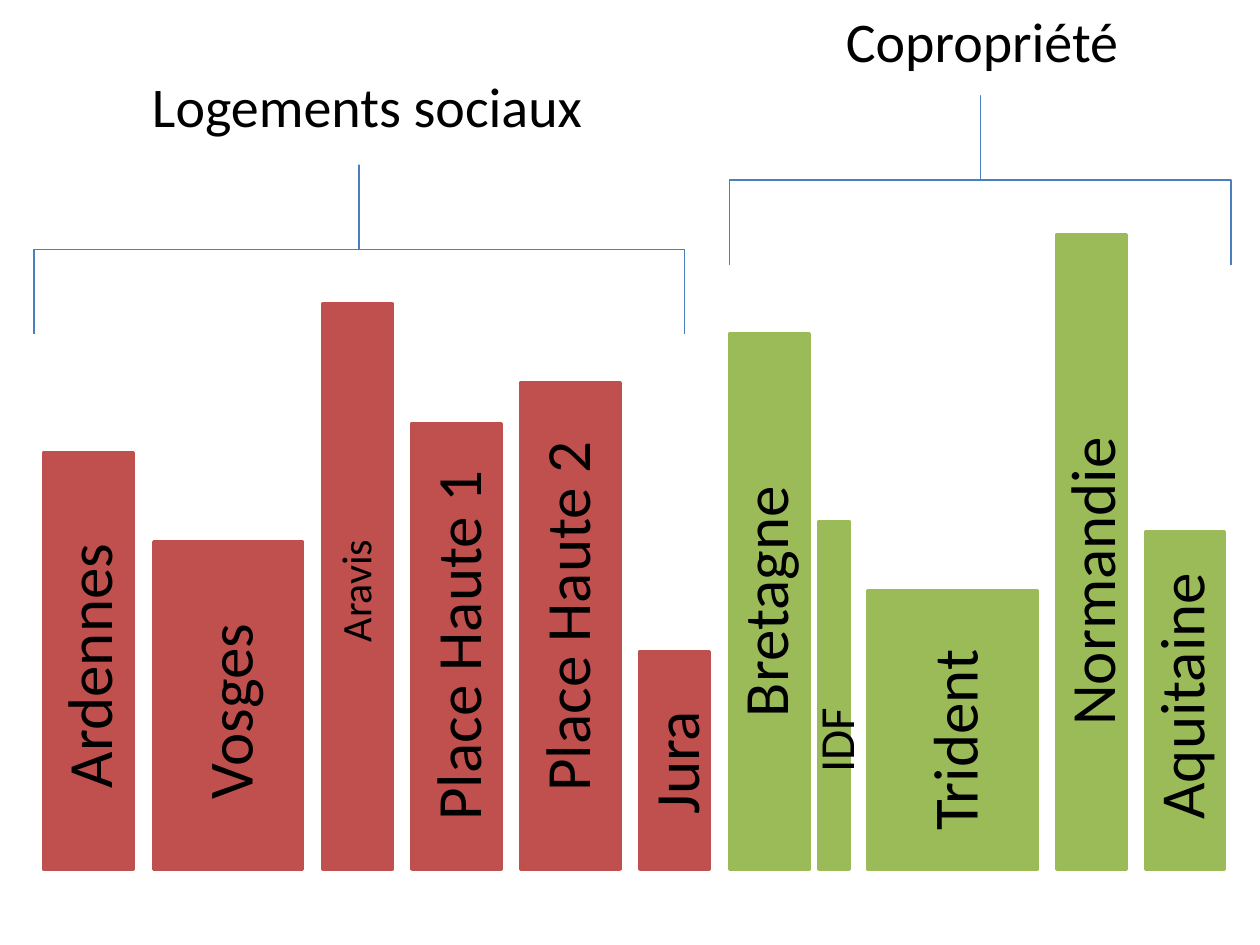
"""Build a skyline of housing blocks, grouped by social housing and co-ownership."""
import pptx
import pptx.util
import pptx.dml.color
import pptx.enum.shapes
import pptx.enum.text

PX = 9144
GROUND = 690
SOCIAL, SHARED, BRACE, INK = "C0504D", "9BBB59", "4B7EBC", "000000"


def color(value):
    return pptx.dml.color.RGBColor.from_string(value)


def add_label(slide, wording, left, top, length, size, rotation=0):
    thickness = int(size * 1.22 / 72 * 100 + 10)
    label = slide.shapes.add_textbox(left * PX, top * PX, length * PX, thickness * PX)
    label.rotation = rotation
    frame = label.text_frame
    frame.word_wrap = True
    frame.auto_size = pptx.enum.text.MSO_AUTO_SIZE.SHAPE_TO_FIT_TEXT
    paragraph = frame.paragraphs[0]
    paragraph.alignment = pptx.enum.text.PP_ALIGN.CENTER
    run = paragraph.add_run()
    run.text = wording
    run.font.name = "Calibri"
    run.font.size = pptx.util.Pt(size)
    run.font.color.rgb = color(INK)


deck = pptx.Presentation()
deck.slide_width, deck.slide_height = 1000 * PX, 750 * PX
slide = deck.slides.add_slide(deck.slide_layouts[6])

buildings = [
    ("Ardennes", SOCIAL, (35, 359, 71), (-84, 493, 307, 36)),
    ("Vosges", SOCIAL, (122, 430, 118), (63, 529, 236, 36)),
    ("Aravis", SOCIAL, (256, 241, 55), (69, 444, 425, 24)),
    ("Place Haute 1", SOCIAL, (327, 336, 71), (209, 477, 307, 36)),
    ("Place Haute 2", SOCIAL, (413, 304, 79), (272, 454, 354, 36)),
    ("Jura", SOCIAL, (508, 517, 55), (470, 570, 131, 36)),
    ("Bretagne", SHARED, (579, 265, 63), (409, 442, 394, 36)),
    ("IDF", SHARED, (650, 414, 24), (568, 559, 189, 28)),
    ("Trident", SHARED, (689, 469, 134), (654, 552, 205, 36)),
    ("Normandie", SHARED, (839, 186, 55), (653, 426, 425, 36)),
    ("Aquitaine", SHARED, (909, 422, 63), (783, 517, 307, 36)),
]
for name, tint, (left, top, width), label_place in buildings:
    block = slide.shapes.add_shape(
        pptx.enum.shapes.MSO_SHAPE.RECTANGLE,
        left * PX, top * PX, width * PX, (GROUND - top) * PX)
    block.shadow.inherit = False
    block.fill.solid()
    block.fill.fore_color.rgb = color(tint)
    block.line.color.rgb = color(tint)
    block.line.width = pptx.util.Pt(2)
    add_label(slide, name, *label_place, rotation=270)

groups = [
    ("Logements sociaux", (67, 52, 449), (218, -60, 134, 516)),
    ("Copropriété", (634, 0, 291), (711, -56, 134, 398)),
]
for name, heading_place, brace_place in groups:
    brace = slide.shapes.add_shape(
        pptx.enum.shapes.MSO_SHAPE.LEFT_BRACE, *(edge * PX for edge in brace_place))
    brace.rotation = 90
    brace.adjustments[0] = 0
    brace.adjustments[1] = 0.5
    brace.shadow.inherit = False
    brace.fill.background()
    brace.line.color.rgb = color(BRACE)
    brace.line.width = pptx.util.Pt(0.75)
    add_label(slide, name, *heading_place, 32)

deck.save("out.pptx")
